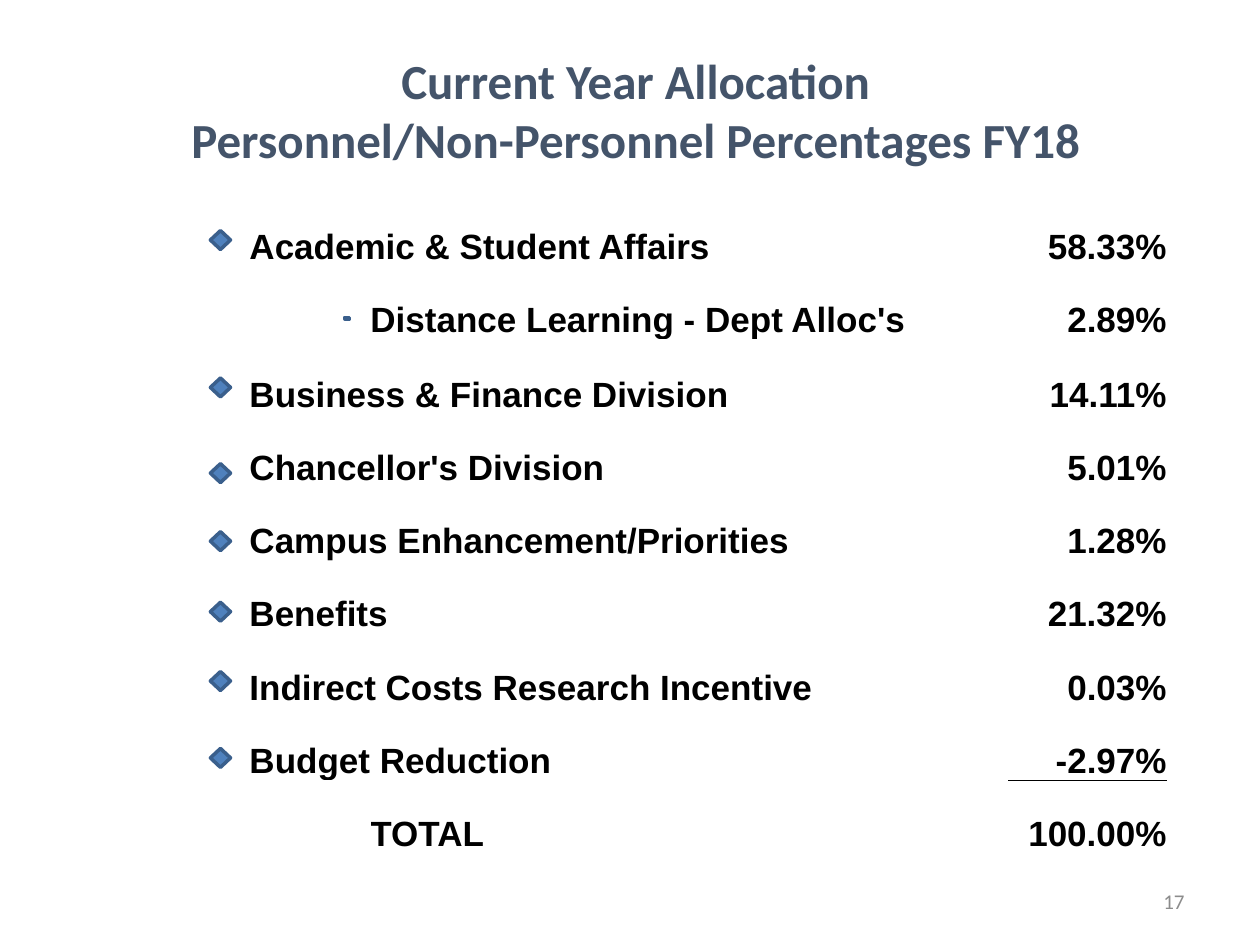
from pptx import Presentation
from pptx.dml.color import RGBColor
from pptx.enum import shapes, text
from pptx.oxml import parse_xml
from pptx.oxml.ns import nsdecls
from pptx.util import Inches, Pt

# Content
HEADING = ["Current Year Allocation", "Personnel/Non-Personnel Percentages FY18"]
# label, share, first column of the label, columns it spans
ALLOCATIONS = [
    ("Academic & Student Affairs", "58.33%", 1, 2),
    ("Distance Learning - Dept Alloc's", "2.89%", 2, 2),
    ("Business & Finance Division", "14.11%", 1, 2),
    ("Chancellor's Division", "5.01%", 1, 2),
    ("Campus Enhancement/Priorities", "1.28%", 1, 3),
    ("Benefits", "21.32%", 1, 2),
    ("Indirect Costs Research Incentive", "0.03%", 1, 3),
    ("Budget Reduction", "-2.97%", 1, 2),
    ("TOTAL", "100.00%", 2, 1),
]
PAGE_NUMBER = "17"

# Layout
COLUMNS = [1.15, 0.96, 3.3, 1.77, 1.25]
ROWS = [0.43, 0.43, 0.18, 0.58, 0.58, 0.6] + [0.58] * 6
FIRST_ROW = 3
SHARE_COLUMN = 4
DIAMOND_TOPS = [1.83, 3, 3.68, 4.22, 4.78, 5.33, 5.94]
LEFT, CENTER, RIGHT = text.PP_ALIGN.LEFT, text.PP_ALIGN.CENTER, text.PP_ALIGN.RIGHT


def color(value):
    return RGBColor.from_string(value)


def write(frame, words, size, font, ink, align, bold=True):
    frame.text = words
    paragraph = frame.paragraphs[0]
    paragraph.alignment = align
    run = paragraph.runs[0].font
    run.size, run.name, run.bold = Pt(size), font, bold
    run.color.rgb = color(ink)


def add_rule(cell, side):
    cell._tc.get_or_add_tcPr().insert(0, parse_xml(
        f'<a:{side} {nsdecls("a")} w="6350"><a:solidFill>'
        f'<a:srgbClr val="000000"/></a:solidFill></a:{side}>'))


def add_marker(slide, kind, left, top, width, height):
    marker = slide.shapes.add_shape(
        kind, Inches(left), Inches(top), Inches(width), Inches(height))
    marker.shadow.inherit = False
    marker.fill.solid()
    marker.fill.fore_color.rgb = color("4F81BD")
    marker.line.color.rgb = color("3A5F8C")
    marker.line.width = Pt(2)


def add_allocations(slide):
    table = slide.shapes.add_table(
        len(ROWS), len(COLUMNS), Inches(0.83), Inches(0.42),
        Inches(sum(COLUMNS)), Inches(sum(ROWS))).table
    table.first_row = table.horz_banding = False
    for column, width in zip(table.columns, COLUMNS):
        column.width = Inches(width)
    for row, height in zip(table.rows, ROWS):
        row.height = Inches(height)

    # Plain cells; a small end mark keeps the narrow spacer row low
    for cell in table.iter_cells():
        cell.fill.background()
        cell.margin_left = cell.margin_right = 0
        cell.margin_top = cell.margin_bottom = 0
        cell.vertical_anchor = text.MSO_ANCHOR.BOTTOM
        cell.text_frame.paragraphs[0]._p.append(
            parse_xml(f'<a:endParaRPr {nsdecls("a")} sz="800"/>'))

    # Heading rows
    for row, line in enumerate(HEADING):
        cell = table.cell(row, 0)
        cell.merge(table.cell(row, len(COLUMNS) - 1))
        write(cell.text_frame, line, 28, "Calibri", "44546A", CENTER)

    # Allocation rows
    for row, (label, share, column, span) in enumerate(ALLOCATIONS, FIRST_ROW):
        cell = table.cell(row, column)
        if span > 1:
            cell.merge(table.cell(row, column + span - 1))
        write(cell.text_frame, label, 20, "Arial", "000000", LEFT)
        write(table.cell(row, SHARE_COLUMN).text_frame, share,
              20, "Arial", "000000", RIGHT)

    # Rule above the total
    total_row = len(ROWS) - 1
    add_rule(table.cell(total_row - 1, SHARE_COLUMN), "lnB")
    add_rule(table.cell(total_row, SHARE_COLUMN), "lnT")


def main():
    deck = Presentation()
    deck.slide_width, deck.slide_height = Inches(10), Inches(7.5)
    slide = deck.slides.add_slide(deck.slide_layouts[6])

    # Page number
    page = slide.shapes.add_textbox(
        Inches(7.17), Inches(6.95), Inches(2.33), Inches(0.4)).text_frame
    page.word_wrap = True
    page.vertical_anchor = text.MSO_ANCHOR.MIDDLE
    write(page, PAGE_NUMBER, 12, "Calibri", "8C8C8C", RIGHT, bold=False)

    add_allocations(slide)

    # Row markers
    for top in DIAMOND_TOPS:
        add_marker(slide, shapes.MSO_SHAPE.DIAMOND, 1.67, top, 0.16, 0.15)
    add_marker(slide, shapes.MSO_SHAPE.MATH_MINUS, 2.73, 2.5, 0.05, 0.05)

    deck.save("out.pptx")


if __name__ == "__main__":
    main()
